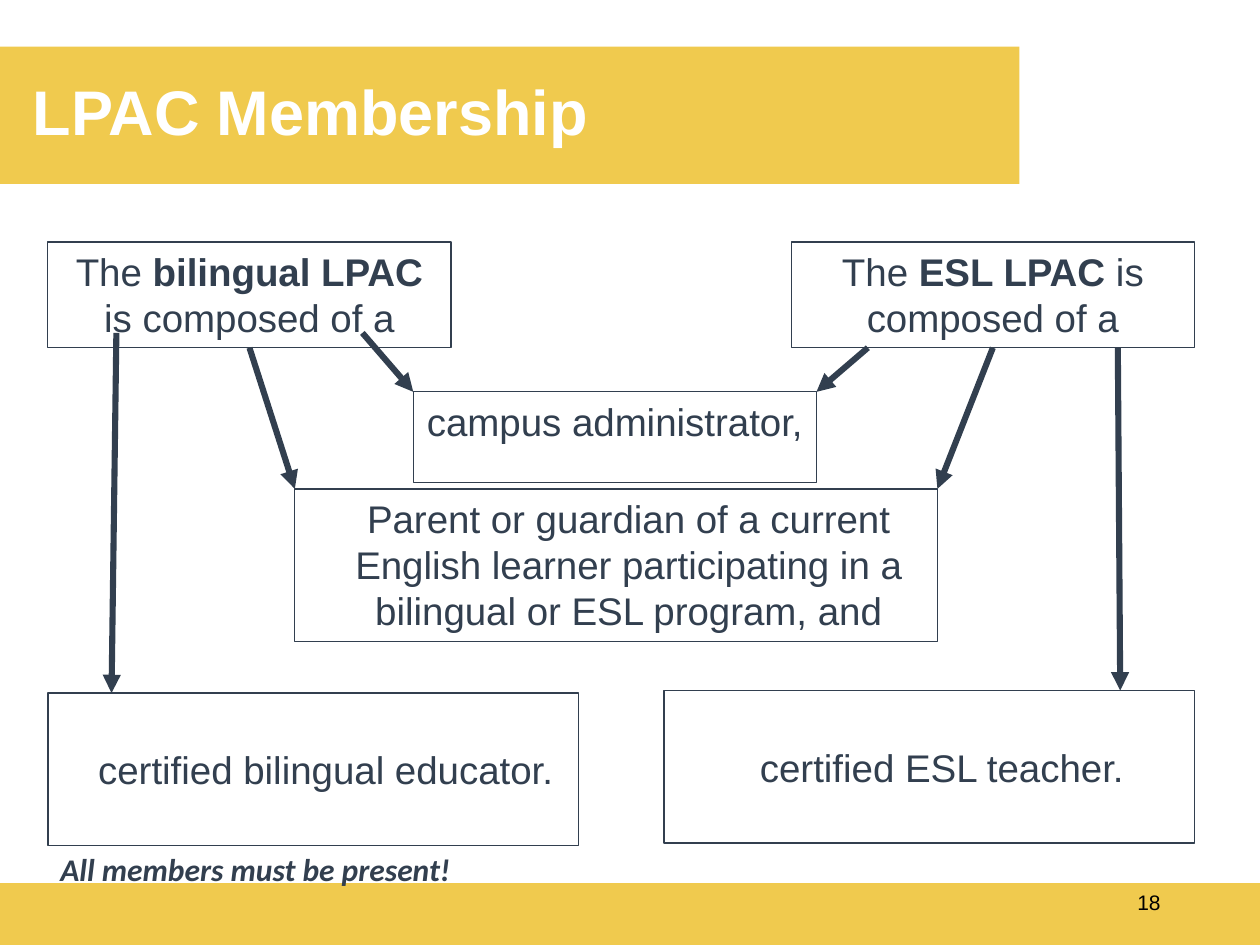
from dataclasses import dataclass

from lxml import etree
from pptx import Presentation
from pptx.dml.color import RGBColor
from pptx.enum.shapes import MSO_CONNECTOR, MSO_SHAPE
from pptx.enum.text import MSO_ANCHOR, MSO_AUTO_SIZE, PP_ALIGN
from pptx.oxml.ns import qn
from pptx.util import Inches, Pt

RECT, STRAIGHT = MSO_SHAPE.RECTANGLE, MSO_CONNECTOR.STRAIGHT
LEFT, CENTER, RIGHT = PP_ALIGN.LEFT, PP_ALIGN.CENTER, PP_ALIGN.RIGHT
TOP, MIDDLE = MSO_ANCHOR.TOP, MSO_ANCHOR.MIDDLE
BOTTOM_SITE = 2


@dataclass(frozen=True)
class Theme:
    gold: str = "F0CA4E"
    ink: str = "323F4F"
    white: str = "FFFFFF"
    black: str = "000000"
    font: str = "Arial"
    note_font: str = "Calibri"
    title: int = 36
    body: int = 22
    note: int = 18
    number: int = 12
    border: float = 0.75
    arrow: float = 3.5


T = Theme()
W, H = 10, 7.5
X0, X1 = 0.38, 9.48            # content edges
HEAD_W, WIDE_W, LAST_W = 3.2, 5.1, 4.21
HEAD_H, ADMIN_H, TALL_H = 0.84, 0.72, 1.21

TITLE = "LPAC Membership"
NOTE = "All members must be present!"
NUMBER = "18"
BANDS = [(-0.01, 0.37, 8.1, 1.09), (0, 7.01, W, H - 7.01)]

# name: (left, top, width, height), runs as (text, bold), text options
BOXES = {
    "bilingual": ((X0, 1.92, HEAD_W, HEAD_H),
                  [("The ", False), ("bilingual LPAC ", True), ("is composed of a", False)], {}),
    "esl": ((X1 - HEAD_W, 1.92, HEAD_W, HEAD_H),
            [("The ", False), ("ESL LPAC ", True), ("is composed of a", False)], {}),
    "admin": ((3.28, 3.11, HEAD_W, ADMIN_H), [("campus administrator,", False)], {}),
    "parent": ((2.34, 3.88, WIDE_W, TALL_H),
               [("Parent or guardian of a current English learner participating "
                 "in a bilingual or ESL program, and", False)], {"indent": 0.2}),
    "educator": ((X0, 5.5, LAST_W, TALL_H),
                 [("certified bilingual educator.", False)], {"indent": 0.2, "anchor": MIDDLE}),
    "teacher": ((X1 - LAST_W, 5.48, LAST_W, TALL_H),
                [("certified ESL teacher.", False)], {"indent": 0.2, "anchor": MIDDLE}),
}

# from box, (x share, y share), to box, (x share, y share)
ARROWS = [
    ("bilingual", (0.17, 0.86), "educator", (0.12, 0)),
    ("bilingual", (0.5, 1), "parent", (0, 0)),
    ("bilingual", (0.78, 0.86), "admin", (0, 0)),
    ("esl", (0.81, 1), "teacher", (0.86, 0)),
    ("esl", (0.5, 1), "parent", (1, 0)),
    ("esl", (0.19, 1), "admin", (1, 0)),
]


def rgb(color):
    return RGBColor.from_string(color)


def inches(values):
    return [Inches(v) for v in values]


def write(sp, runs, size=T.body, color=T.ink, font=T.font, align=CENTER,
          anchor=TOP, indent=0, italic=False, spacing=None):
    tf = sp.text_frame
    tf.word_wrap = True
    tf.auto_size = MSO_AUTO_SIZE.NONE
    tf.vertical_anchor = anchor
    p = tf.paragraphs[0]
    p.alignment = align
    p.line_spacing = spacing
    if indent:
        pPr = p._p.get_or_add_pPr()
        pPr.set("marL", str(Inches(indent)))
        pPr.set("indent", "0")
    for text, bold in runs:
        r = p.add_run()
        r.text = text
        f = r.font
        f.name, f.size, f.bold, f.italic = font, Pt(size), bold, italic
        f.color.rgb = rgb(color)


def add_rect(slide, at, fill, line=None):
    sp = slide.shapes.add_shape(RECT, *inches(at))
    sp.shadow.inherit = False
    sp.fill.solid()
    sp.fill.fore_color.rgb = rgb(fill)
    if line:
        sp.line.color.rgb = rgb(line)
        sp.line.width = Pt(T.border)
    else:
        sp.line.fill.background()
    return sp


def point(name, share):
    """Point at the given shares of a box's width and height."""
    x, y, w, h = BOXES[name][0]
    return x + w * share[0], y + h * share[1]


def add_arrow(slide, shapes, source, start, target, end):
    cn = slide.shapes.add_connector(
        STRAIGHT, *inches(point(source, start) + point(target, end)))
    if start == (0.5, 1):
        cn.begin_connect(shapes[source], BOTTOM_SITE)
    cn.line.color.rgb = rgb(T.ink)
    cn.line.width = Pt(T.arrow)
    etree.SubElement(cn.line._get_or_add_ln(), qn("a:tailEnd"), type="triangle")
    etree.SubElement(cn._element.spPr, qn("a:effectLst"))


def main():
    prs = Presentation()
    prs.slide_width, prs.slide_height = inches((W, H))
    slide = prs.slides.add_slide(prs.slide_layouts[5])

    title = slide.shapes.title
    title.left, title.top, title.width, title.height = inches((0.16, 0.5, 8.65, 0.83))
    write(title, [(TITLE, True)], size=T.title, color=T.white,
          align=LEFT, anchor=MIDDLE, spacing=0.9)
    for at in BANDS:
        add_rect(slide, at, T.gold)
    slide.shapes._spTree.append(title._element)  # in front of its band

    shapes = {}
    for name, (at, runs, options) in BOXES.items():
        shapes[name] = add_rect(slide, at, T.white, T.ink)
        write(shapes[name], runs, **options)
    for arrow in ARROWS:
        add_arrow(slide, shapes, *arrow)

    note = slide.shapes.add_textbox(*inches((X0, 6.7, 3.32, 0.4)))
    write(note, [(NOTE, True)], size=T.note, font=T.note_font, align=LEFT, italic=True)
    number = slide.shapes.add_textbox(*inches((7.06, 6.96, 2.25, 0.4)))
    write(number, [(NUMBER, False)], size=T.number, color=T.black, align=RIGHT, anchor=MIDDLE)

    prs.save("out.pptx")


if __name__ == "__main__":
    main()
